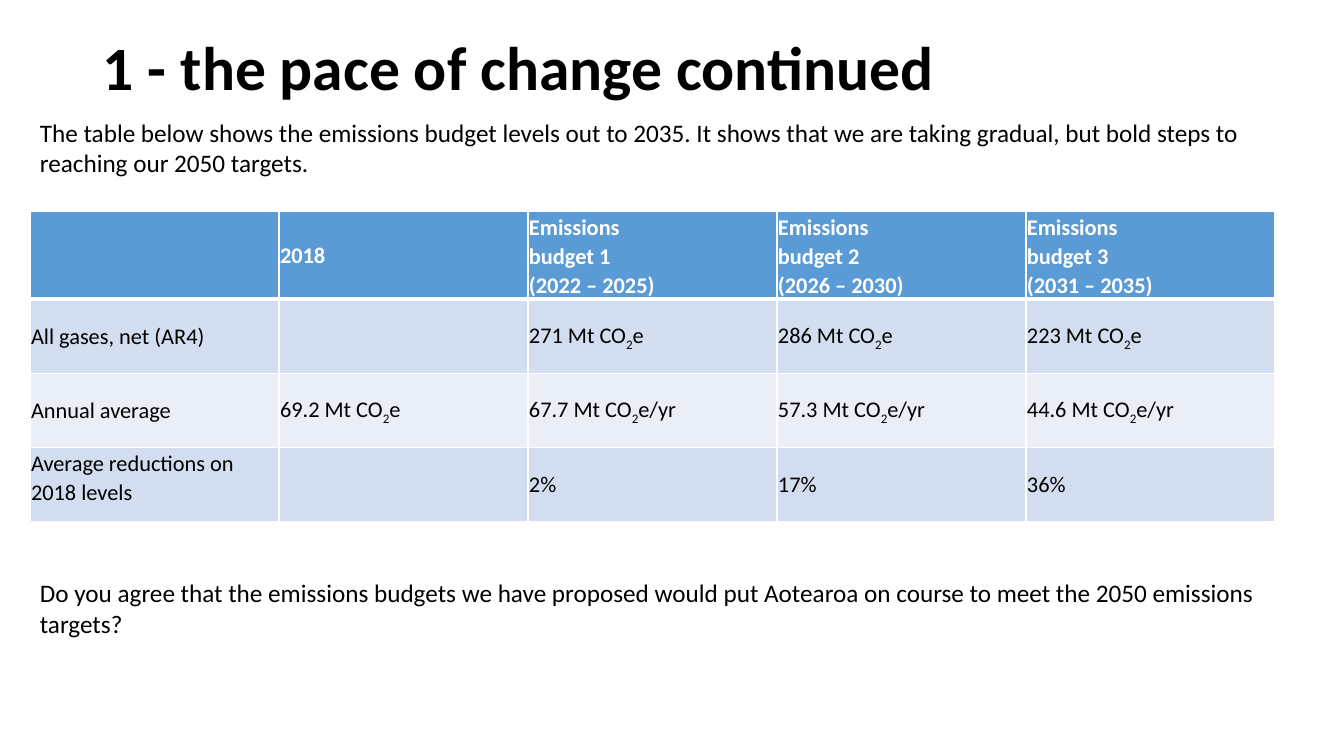
"""Build the slide on emissions budget levels out to 2035."""
from lxml import etree
from pptx import Presentation
from pptx.dml.color import RGBColor
from pptx.enum.text import MSO_ANCHOR
from pptx.oxml.ns import qn
from pptx.util import Pt

PX = 914400 / 100.8
TOP, MIDDLE = MSO_ANCHOR.TOP, MSO_ANCHOR.MIDDLE
FONT = "Calibri"
COLORS = {"text": "000000", "white": "FFFFFF", "head": "5B9BD5",
          "odd": "D2DEEF", "even": "EAEFF7"}
ROWS = [
    ["", "2018", "Emissions\nbudget 1\n(2022 – 2025)",
     "Emissions\nbudget 2\n(2026 – 2030)", "Emissions\nbudget 3\n(2031 – 2035)"],
    ["All gases, net (AR4)", "", "271 Mt CO2e", "286 Mt CO2e", "223 Mt CO2e"],
    ["Annual average", "69.2 Mt CO2e", "67.7 Mt CO2e/yr",
     "57.3 Mt CO2e/yr", "44.6 Mt CO2e/yr"],
    ["Average reductions on 2018 levels", "", "2%", "17%", "36%"],
]
FILLS = ["head", "odd", "even", "odd"]
HEIGHTS = [88, 74, 74, 74]
LEFT, COL = 30, 249


def px(*sizes):
    return [round(size * PX) for size in sizes]


def style(run, size, color="text", bold=False):
    run.font.name = FONT
    run.font.size = Pt(size)
    run.font.bold = bold
    run.font.color.rgb = RGBColor.from_string(COLORS[color])


deck = Presentation()
deck.slide_width, deck.slide_height = px(1344, 756)
slide = deck.slides.add_slide(deck.slide_layouts[6])

title = slide.shapes.add_textbox(*px(93, 28, 1159, 84)).text_frame
title.word_wrap = True
title.vertical_anchor = MIDDLE
title.text = "1 - the pace of change continued"
title.paragraphs[0].line_spacing = 0.9
style(title.paragraphs[0].runs[0], 44, bold=True)

body = slide.shapes.add_textbox(*px(LEFT, 112, 1292, 559)).text_frame
body.word_wrap = True
body.text = (
    "The table below shows the emissions budget levels out to 2035. It shows that "
    "we are taking gradual, but bold steps to reaching our 2050 targets.\n"
    "Do you agree that the emissions budgets we have proposed would put Aotearoa "
    "on course to meet the 2050 emissions targets?")
for para in body.paragraphs:
    style(para.runs[0], 18)
body.paragraphs[1].space_before = Pt(286)

frame = slide.shapes.add_table(
    len(ROWS), len(ROWS[0]),
    *px(LEFT, 211, COL * len(ROWS[0]), sum(HEIGHTS)))
table = frame.table
for column in table.columns:
    column.width = px(COL)[0]

for r, texts in enumerate(ROWS):
    table.rows[r].height = px(HEIGHTS[r])[0]
    for c, text in enumerate(texts):
        cell = table.cell(r, c)
        cell.margin_left = cell.margin_right = Pt(0.75)
        cell.margin_top = cell.margin_bottom = Pt(0.75)
        cell.vertical_anchor = TOP if (r, c) == (3, 0) else MIDDLE
        props = cell._tc.get_or_add_tcPr()
        for side in "LRTB":
            thick = (r, side) in [(0, "B"), (1, "T")]
            line = etree.SubElement(props, qn("a:ln" + side), w=str(Pt(3 if thick else 1)))
            solid = etree.SubElement(line, qn("a:solidFill"))
            etree.SubElement(solid, qn("a:srgbClr"), val=COLORS["white"])
        cell.fill.solid()
        cell.fill.fore_color.rgb = RGBColor.from_string(COLORS[FILLS[r]])
        cell.text_frame.text = text
        for para, words in zip(cell.text_frame.paragraphs, text.split("\n")):
            para.line_spacing = 1.07
            para.text = ""
            parts = words.replace("CO2", "CO|2|").split("|") if words else []
            for n, part in enumerate(parts):
                run = para.add_run()
                run.text = part
                style(run, 16, "text" if r else "white", r == 0)
                if n == 1:
                    run._r.get_or_add_rPr().set("baseline", "-25000")

deck.save("out.pptx")
